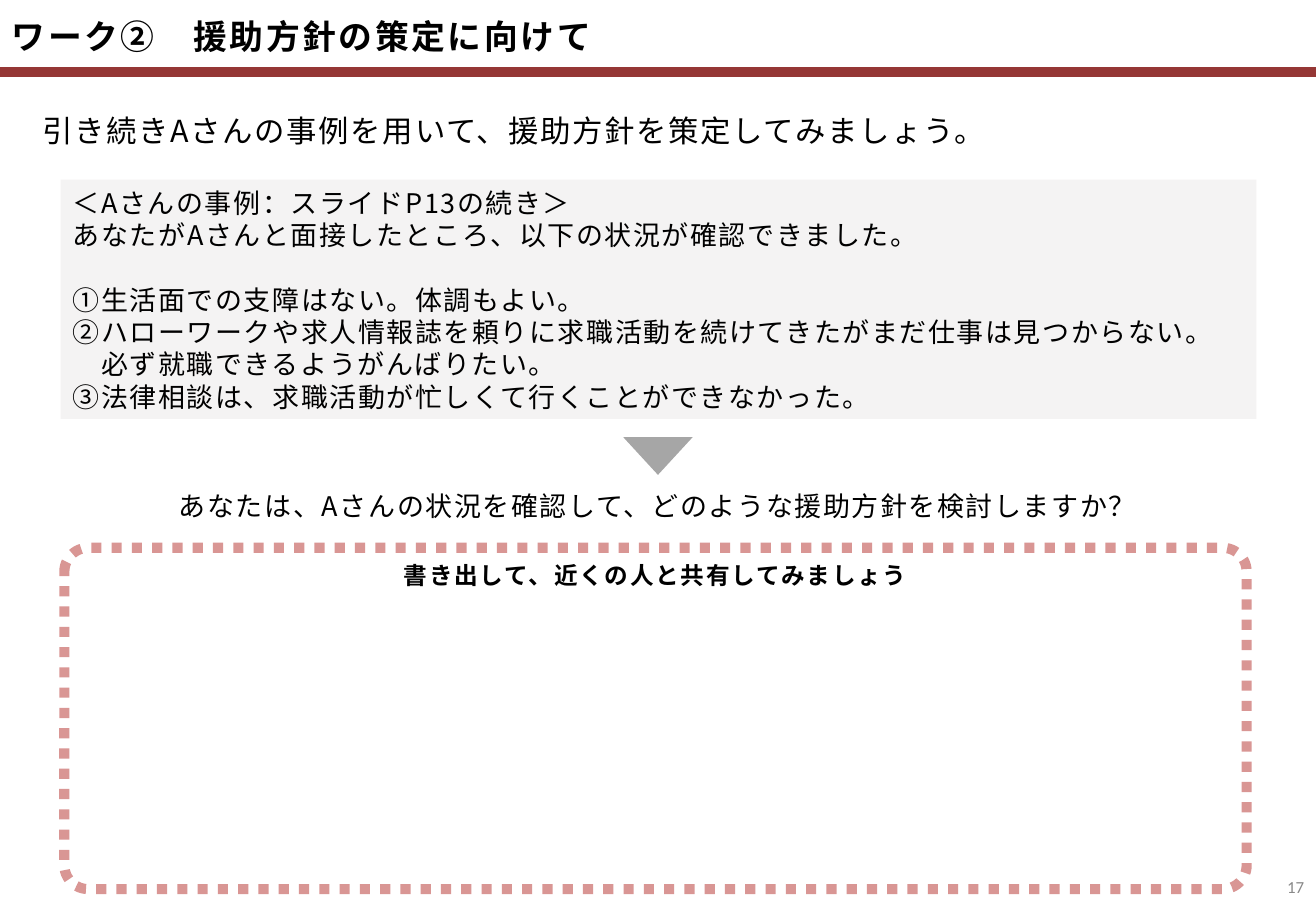
from lxml import etree
from pptx import Presentation, util as u
from pptx.dml.color import RGBColor
from pptx.enum import dml, shapes, text
from pptx.oxml.ns import qn

PX = 9144  # 100 px to the inch
FONT = "Noto Sans CJK JP"
BLACK = RGBColor(0x00, 0x00, 0x00)
MAROON = RGBColor(0x95, 0x37, 0x35)
PINK = RGBColor(0xD9, 0x96, 0x94)
PALE_GRAY = RGBColor(0xEA, 0xE8, 0xE8)
ARROW_GRAY = RGBColor(0xA6, 0xA6, 0xA6)
NUMBER_GRAY = RGBColor(0x89, 0x89, 0x89)

LINE_HEIGHT = u.Pt(19.2)
CASE_INTRO = [
    "＜Aさんの事例：スライドP13の続き＞",
    "あなたがAさんと面接したところ、以下の状況が確認できました。",
]
CASE_FACTS = [
    "①生活面での支障はない。体調もよい。",
    "②ハローワークや求人情報誌を頼りに求職活動を続けてきたがまだ仕事は見つからない。\n　必ず就職できるようがんばりたい。",
    "③法律相談は、求職活動が忙しくて行くことができなかった。",
]


def px(*lengths):
    return [length * PX for length in lengths]


def add_run(paragraph, words, size, bold=False, color=BLACK, font=FONT, spacing=1):
    run = paragraph.add_run()
    run.text = words
    run.font.size = u.Pt(size)
    run.font.bold = bold
    run.font.name = font
    run.font.color.rgb = color
    properties = run.font._element
    if spacing:
        properties.set("spc", str(int(spacing * 100)))
    east_asian = etree.Element(qn("a:ea"), typeface=font)
    properties.find(qn("a:latin")).addnext(east_asian)


def write_lines(paragraph, words, size, **style):
    for index, line in enumerate(words.split("\n")):
        if index:
            paragraph.add_line_break()
        add_run(paragraph, line, size, **style)


def add_label(slide, box, words, size, align=text.PP_ALIGN.LEFT, inset=True, **style):
    frame = slide.shapes.add_textbox(*px(*box)).text_frame
    frame.word_wrap = inset
    frame.vertical_anchor = text.MSO_ANCHOR.MIDDLE
    if not inset:
        frame.margin_left = frame.margin_right = 0
        frame.margin_top = frame.margin_bottom = 0
    frame.paragraphs[0].alignment = align
    add_run(frame.paragraphs[0], words, size, **style)


def add_panel(slide, kind, box, fill=None):
    shape = slide.shapes.add_shape(kind, *px(*box))
    shape.shadow.inherit = False
    shape.line.fill.background()
    if fill is None:
        shape.fill.background()
    else:
        shape.fill.solid()
        shape.fill.fore_color.rgb = fill
    return shape


def add_rule(slide, y, width):
    rule = slide.shapes.add_connector(
        shapes.MSO_CONNECTOR.STRAIGHT, *px(0, y, width, y))
    rule.line.color.rgb = MAROON
    rule.line.width = u.Pt(6)
    etree.SubElement(rule._element.spPr, qn("a:effectLst"))


def add_case(slide):
    panel = add_panel(slide, shapes.MSO_SHAPE.RECTANGLE, (50, 148, 984, 197), PALE_GRAY)
    color = panel._element.spPr.find(qn("a:solidFill"))[0]
    etree.SubElement(color, qn("a:alpha"), val="50000")
    frame = panel.text_frame
    frame.vertical_anchor = text.MSO_ANCHOR.MIDDLE
    for index, words in enumerate(CASE_INTRO + CASE_FACTS):
        paragraph = frame.add_paragraph() if index else frame.paragraphs[0]
        paragraph.alignment = text.PP_ALIGN.LEFT
        paragraph.line_spacing = LINE_HEIGHT
        # One open line separates the introduction from the facts
        if index == len(CASE_INTRO):
            paragraph.space_before = LINE_HEIGHT
        write_lines(paragraph, words, 16)


def add_down_arrow(slide):
    arrow = add_panel(slide, shapes.MSO_SHAPE.ISOSCELES_TRIANGLE,
                      (513, 360, 57, 31), ARROW_GRAY)
    arrow._element.spPr.xfrm.set("flipV", "1")


def add_answer_box(slide):
    box = add_panel(slide, shapes.MSO_SHAPE.ROUNDED_RECTANGLE, (53, 451, 973, 281))
    box.adjustments[0] = 0.07
    box.line.color.rgb = PINK
    box.line.width = u.Pt(6)
    box.line.dash_style = dml.MSO_LINE.ROUND_DOT
    frame = box.text_frame
    frame.vertical_anchor = text.MSO_ANCHOR.TOP
    frame.paragraphs[0].alignment = text.PP_ALIGN.CENTER
    add_run(frame.paragraphs[0], "書き出して、近くの人と共有してみましょう", 14, bold=True)


def main():
    presentation = Presentation()
    presentation.slide_width, presentation.slide_height = px(1083, 750)
    slide = presentation.slides.add_slide(presentation.slide_layouts[6])

    # Heading and page number
    add_rule(slide, 59, 1083)
    add_label(slide, (0, 0, 907, 60), "ワーク②　援助方針の策定に向けて", 20,
              bold=True, spacing=1.5)
    add_label(slide, (1042, 710, 41, 40), "17", 10, text.PP_ALIGN.RIGHT,
              color=NUMBER_GRAY, font="Calibri", spacing=0)

    # Case study
    add_label(slide, (35, 92, 791, 31),
              "引き続きAさんの事例を用いて、援助方針を策定してみましょう。", 18, inset=False)
    add_case(slide)

    # Question and space for the answer
    add_down_arrow(slide)
    add_label(slide, (124, 395, 835, 42),
              "あなたは、Aさんの状況を確認して、どのような援助方針を検討しますか？", 16,
              text.PP_ALIGN.CENTER)
    add_answer_box(slide)

    presentation.save("out.pptx")


if __name__ == "__main__":
    main()
